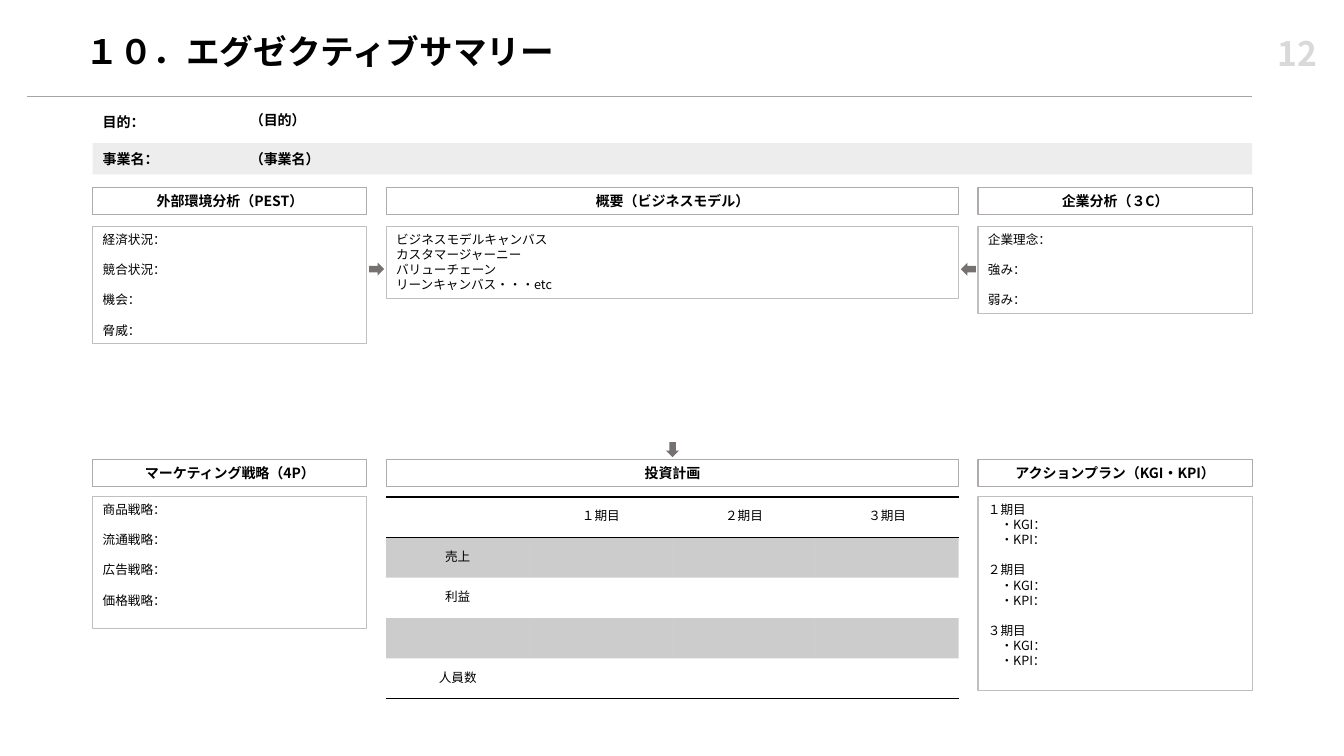
from lxml.etree import SubElement
from pptx import Presentation
from pptx.dml.color import RGBColor
from pptx.enum.shapes import MSO_CONNECTOR, MSO_SHAPE
from pptx.enum.text import MSO_ANCHOR, PP_ALIGN
from pptx.oxml import parse_xml
from pptx.oxml.ns import nsdecls, qn
from pptx.util import Inches, Pt

# Content
TITLE, PAGE = "１０．エグゼクティブサマリー", "12"
FACTS = [("目的：", "（目的）", 1.08, 1.08), ("事業名：", "（事業名）", 1.44, 1.47)]
# Panels: column, row, heading, body groups, body height
PANELS = [
    (0, 0, "外部環境分析（PEST）",
     [["経済状況："], ["競合状況："], ["機会："], ["脅威："]], 1.16),
    (1, 0, "概要（ビジネスモデル）",
     [["ビジネスモデルキャンバス", "カスタマージャーニー",
       "バリューチェーン", "リーンキャンバス・・・etc"]], 0.71),
    (2, 0, "企業分析（３C）", [["企業理念："], ["強み："], ["弱み："]], 0.86),
    (0, 1, "マーケティング戦略（4P）",
     [["商品戦略："], ["流通戦略："], ["広告戦略："], ["価格戦略："]], 1.31),
    (1, 1, "投資計画", None, 0),
    (2, 1, "アクションプラン（KGI・KPI）",
     [[f"{n}期目", "・KGI：", "・KPI："] for n in "１２３"], 1.92),
]
PLAN = [["", "１期目", "２期目", "３期目"],
        ["売上", "", "", ""],
        ["利益", "", "", ""],
        ["", "", "", ""],
        ["人員数", "", "", ""]]
RULED = {0: ("lnT", "lnB"), 4: ("lnB",)}
SHADED = (1, 3)

# Look
COLORS = {"ink": "000000", "page": "D9D9D9", "rule": "A5A5A5", "band": "EDEDED",
          "head": "AFABAB", "body": "BFBFBF", "arrow": "767171"}
CJK = "Noto Sans CJK JP"
BOLD = {"size": Pt(10), "bold": True, "name": CJK}
VALUE = {**BOLD, "name": "Arial"}
PLAIN = {"size": Pt(9), "bold": False, "name": CJK}
BIG = {"size": Pt(24), "bold": True, "name": "Arial"}
NUMBER = {**BIG, "name": CJK}
HEAD_LINE, VALUE_LINE, BODY_LINE = Pt(12), Pt(10.4), Pt(10.8)

# Grid
LEFT, WIDTH, SIDE, GAP = 0.92, 11.5, 2.72, 0.19
RIGHT = LEFT + WIDTH
MIDDLE = WIDTH - 2 * (SIDE + GAP)
COLS = [(LEFT, SIDE), (LEFT + SIDE + GAP, MIDDLE), (RIGHT - SIDE, SIDE)]
HEAD_TOPS, BODY_TOPS, HEAD_H = (1.86, 4.56), (2.25, 4.93), 0.27
VALUE_X = 2.38
ROW_H = 0.283
ARROW_W, ARROW_H = 0.15, 0.13
ARROWS = [(COLS[1][0] - GAP / 2, 2.67, 0), (COLS[2][0] - GAP / 2, 2.67, 180),
          (LEFT + WIDTH / 2, 4.46, 90)]

prs = Presentation()
prs.slide_width, prs.slide_height = Inches(13.33), Inches(7.5)
s = prs.slides.add_slide(prs.slide_layouts[6])


def rgb(name):
    return RGBColor.from_string(COLORS[name])


def write(p, text, fmt, line, align=PP_ALIGN.LEFT, color="ink"):
    p.alignment, p.line_spacing = align, line
    if not text:
        return
    r = p.add_run()
    r.text = text
    for key, value in fmt.items():
        setattr(r.font, key, value)
    r.font.color.rgb = rgb(color)
    SubElement(r.font._element, qn("a:ea")).set("typeface", CJK)


def label(box, text, fmt, line, wrap=True, anchor=MSO_ANCHOR.TOP, **look):
    tf = s.shapes.add_textbox(*map(Inches, box)).text_frame
    tf.word_wrap, tf.vertical_anchor = wrap, anchor
    write(tf.paragraphs[0], text, fmt, line, **look)


def shape(kind, box, fill=None, line=None):
    sp = s.shapes.add_shape(kind, *map(Inches, box))
    sp.shadow.inherit = False
    if fill:
        sp.fill.solid()
        sp.fill.fore_color.rgb = rgb(fill)
    else:
        sp.fill.background()
    if line:
        sp.line.color.rgb, sp.line.width = rgb(line), Pt(0.75)
    else:
        sp.line.fill.background()
    return sp


# Title, page number and rule
label((0.75, 0.17, 11.67, 0.72), TITLE, BIG, 0.9, anchor=MSO_ANCHOR.MIDDLE)
label((12.01, 0.15, 1.15, 0.75), PAGE, NUMBER, 1.0, anchor=MSO_ANCHOR.MIDDLE,
      align=PP_ALIGN.RIGHT, color="page")
rule = s.shapes.add_connector(MSO_CONNECTOR.STRAIGHT, Inches(0.27), Inches(0.96),
                              Inches(RIGHT), Inches(0.96))
rule.line.color.rgb, rule.line.width = rgb("rule"), Pt(0.5)
SubElement(rule._element.spPr, qn("a:effectLst"))

# Purpose and business name
shape(MSO_SHAPE.RECTANGLE, (LEFT, 1.42, WIDTH, 0.31), fill="band")
for name, value, name_y, value_y in FACTS:
    label((LEFT, name_y, 1.36, HEAD_H), name, BOLD, HEAD_LINE)
    label((VALUE_X, value_y, RIGHT - VALUE_X, HEAD_H), value, VALUE, VALUE_LINE)

# Panels
for col, row, heading, groups, height in PANELS:
    x, w = COLS[col]
    sp = shape(MSO_SHAPE.RECTANGLE, (x, HEAD_TOPS[row], w, HEAD_H), line="head")
    sp.text_frame.word_wrap = True
    sp.text_frame.vertical_anchor = MSO_ANCHOR.MIDDLE
    write(sp.text_frame.paragraphs[0], heading, BOLD, HEAD_LINE, PP_ALIGN.CENTER)
    if not groups:
        continue
    sp = shape(MSO_SHAPE.RECTANGLE, (x, BODY_TOPS[row], w, height), line="body")
    tf = sp.text_frame
    tf.word_wrap, tf.vertical_anchor = True, MSO_ANCHOR.TOP
    lines = [(g, i, text) for g, group in enumerate(groups)
             for i, text in enumerate(group)]
    for n, (g, i, text) in enumerate(lines):
        p = tf.add_paragraph() if n else tf.paragraphs[0]
        write(p, text, PLAIN, BODY_LINE)
        if g and i == 0:
            p.space_before = BODY_LINE
        if text.startswith("・"):
            p._p.get_or_add_pPr().set("marL", str(Pt(9)))

# Investment plan table
x, w = COLS[1]
box = (x, BODY_TOPS[1], w, ROW_H * len(PLAN))
table = s.shapes.add_table(len(PLAN), len(PLAN[0]), *map(Inches, box)).table
table.first_row = table.horz_banding = False
table._tbl.tblPr.find(qn("a:tableStyleId")).text = (
    "{2D5ABB26-0587-4C30-8999-92F81FD0307C}")
for r, texts in enumerate(PLAN):
    for c, text in enumerate(texts):
        cell = table.cell(r, c)
        cell.vertical_anchor = MSO_ANCHOR.MIDDLE
        write(cell.text_frame.paragraphs[0], text, PLAIN, BODY_LINE, PP_ALIGN.CENTER)
        tcPr = cell._tc.get_or_add_tcPr()
        if r in SHADED:
            cell.fill.solid()
            cell.fill.fore_color.rgb = rgb("ink")
            SubElement(tcPr.find(".//" + qn("a:srgbClr")), qn("a:alpha")).set("val", "20000")
        else:
            cell.fill.background()
        for i, edge in enumerate(RULED.get(r, ())):
            tcPr.insert(i, parse_xml(
                f'<a:{edge} {nsdecls("a")} w="{Pt(1)}"><a:solidFill>'
                f'<a:srgbClr val="{COLORS["ink"]}"/></a:solidFill></a:{edge}>'))

# Arrows between panels
for cx, cy, angle in ARROWS:
    sp = shape(MSO_SHAPE.RIGHT_ARROW, (cx - ARROW_W / 2, cy - ARROW_H / 2, ARROW_W, ARROW_H),
               fill="arrow")
    sp.rotation = angle

prs.save("out.pptx")
